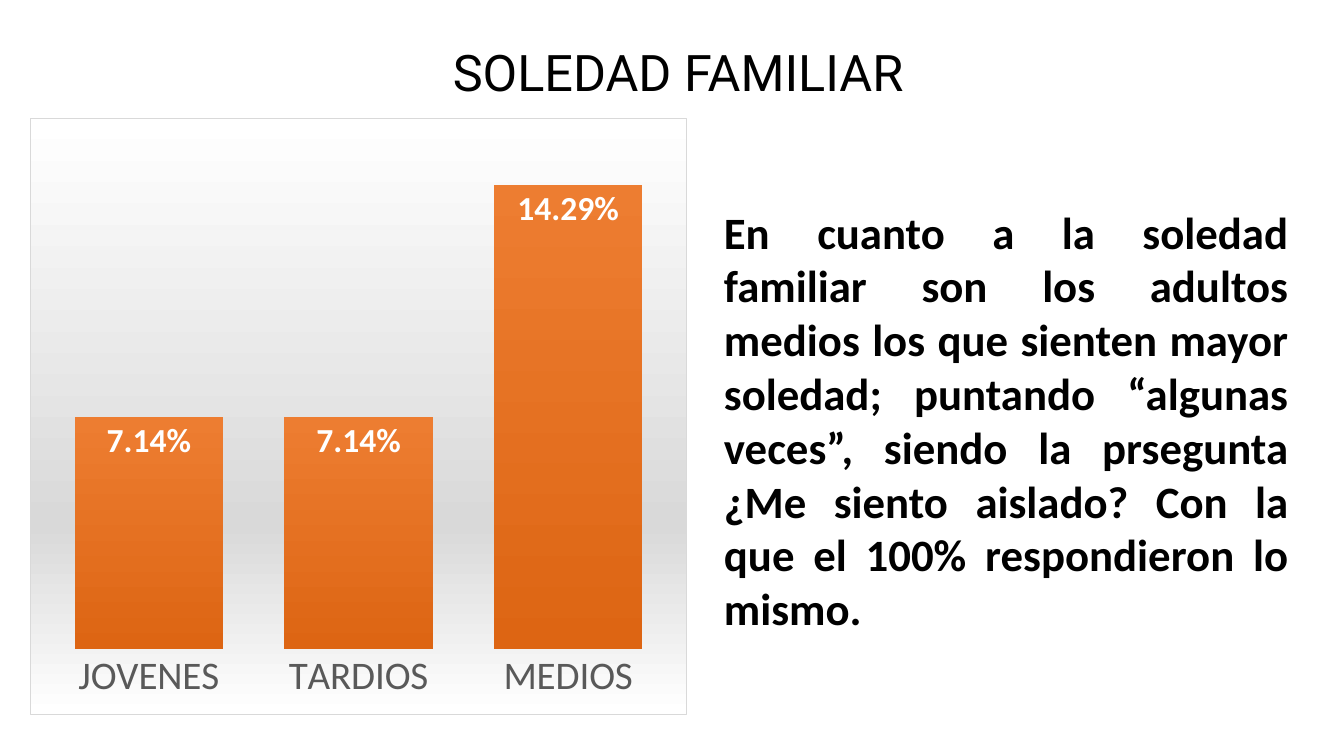
from dataclasses import dataclass

from lxml.etree import SubElement
from pptx import Presentation
from pptx.chart.data import CategoryChartData
from pptx.dml.color import RGBColor
from pptx.enum.chart import XL_CHART_TYPE, XL_LABEL_POSITION, XL_TICK_MARK
from pptx.enum.text import MSO_ANCHOR, MSO_AUTO_SIZE, PP_ALIGN
from pptx.oxml import parse_xml
from pptx.oxml.ns import nsdecls, qn
from pptx.util import Emu, Pt

PX = 9525


@dataclass(frozen=True)
class Theme:
    ink: str = "000000"
    axis_text: str = "595959"
    label_text: str = "FFFFFF"
    border: str = "D9D9D9"
    panel: tuple = ((0, "FFFFFF"), (68, "D9D9D9"), (100, "FFFFFF"))
    bar: tuple = ((0, "ED7D31"), (100, "DD6513"))
    title_font: str = "Roboto"
    body_font: str = "Calibri"
    title_size: int = 36
    body_size: int = 32
    category_size: int = 28
    label_size: int = 24
    chart_size: int = 10


THEME = Theme()


def emu(box):
    return [Emu(length * PX) for length in box]


def set_font(font, name, size, color, bold=False):
    font.name = name
    font.size = Pt(size)
    font.bold = bold
    font.color.rgb = RGBColor.from_string(color)


def vertical_gradient(stops):
    stop_xml = "".join(
        f'<a:gs pos="{percent * 1000}"><a:srgbClr val="{color}"/></a:gs>'
        for percent, color in stops
    )
    return (
        f'<a:gradFill rotWithShape="1"><a:gsLst>{stop_xml}</a:gsLst>'
        '<a:lin ang="5400000" scaled="0"/></a:gradFill>'
    )


def shape_properties(stops, border=None):
    line = "<a:noFill/>"
    if border:
        line = f'<a:solidFill><a:srgbClr val="{border}"/></a:solidFill>'
    return parse_xml(
        f'<c:spPr {nsdecls("c", "a")}>{vertical_gradient(stops)}'
        f'<a:ln w="{Pt(0.75)}">{line}</a:ln></c:spPr>'
    )


def place_plot(chart, x, y, w, h):
    plot_area = chart._chartSpace.chart.plotArea
    layout = plot_area.find(qn("c:layout"))
    if layout is None:
        layout = parse_xml(f'<c:layout {nsdecls("c")}/>')
        plot_area.insert(0, layout)
    manual = SubElement(layout, qn("c:manualLayout"))
    settings = (("layoutTarget", "inner"), ("xMode", "edge"), ("yMode", "edge"),
                ("x", x), ("y", y), ("w", w), ("h", h))
    for tag, setting in settings:
        SubElement(manual, qn(f"c:{tag}")).set("val", str(setting))


def add_words(slide, box, words, font, size, align, anchor, bold=False):
    frame = slide.shapes.add_textbox(*emu(box)).text_frame
    frame.word_wrap = True
    frame.auto_size = MSO_AUTO_SIZE.SHAPE_TO_FIT_TEXT
    frame.vertical_anchor = anchor
    paragraph = frame.paragraphs[0]
    paragraph.text = words
    paragraph.alignment = align
    set_font(paragraph.font, font, size, THEME.ink, bold)


def add_title(slide, box):
    add_words(slide, box, "SOLEDAD FAMILIAR", THEME.title_font,
              THEME.title_size, PP_ALIGN.CENTER, MSO_ANCHOR.TOP)


def add_findings(slide, box):
    add_words(
        slide, box,
        "En cuanto a la soledad familiar son los adultos medios los que "
        "sienten mayor soledad; puntando “algunas veces”, siendo la prsegunta "
        "¿Me siento aislado? Con la que el 100% respondieron lo mismo.",
        THEME.body_font, THEME.body_size, PP_ALIGN.JUSTIFY,
        MSO_ANCHOR.MIDDLE, bold=True)


def add_loneliness_chart(slide, box):
    loneliness = CategoryChartData(number_format="0.00%")
    loneliness.categories = ["JOVENES", "TARDIOS", "MEDIOS"]
    loneliness.add_series("Series 1", (0.0714, 0.0714, 0.1429))
    chart = slide.shapes.add_chart(
        XL_CHART_TYPE.COLUMN_CLUSTERED, *emu(box), loneliness).chart
    chart.has_title = False
    chart.has_legend = False
    set_font(chart.font, THEME.body_font, THEME.chart_size, THEME.ink)
    chart._chartSpace.chart.addnext(shape_properties(THEME.panel, THEME.border))
    place_plot(chart, 0.02, 0.02, 0.96, 0.87)

    ages = chart.category_axis
    ages.major_tick_mark = XL_TICK_MARK.NONE
    ages.format.line.fill.background()
    set_font(ages.tick_labels.font, THEME.body_font,
             THEME.category_size, THEME.axis_text)

    share = chart.value_axis
    share.visible = False
    share.has_major_gridlines = False
    share.minimum_scale = 0
    share.maximum_scale = 0.16
    share.tick_labels.number_format = "0.00%"
    share.tick_labels.number_format_is_linked = False

    bars = chart.plots[0]
    bars.gap_width = 41
    bars.vary_by_categories = False
    series = bars.series[0]
    series.invert_if_negative = False
    series._element.find(qn("c:tx")).addnext(shape_properties(THEME.bar))

    labels = series.data_labels
    labels.show_value = True
    labels.position = XL_LABEL_POSITION.INSIDE_END
    labels.number_format = "0.00%"
    labels.number_format_is_linked = False
    set_font(labels.font, THEME.body_font, THEME.label_size,
             THEME.label_text, bold=True)


def main():
    presentation = Presentation()
    presentation.slide_width, presentation.slide_height = emu((1280, 720))
    slide = presentation.slides.add_slide(presentation.slide_layouts[6])
    add_title(slide, (299, 34, 694, 68))
    add_loneliness_chart(slide, (29, 112, 625, 569))
    add_findings(slide, (680, 162, 557, 475))
    presentation.save("out.pptx")


if __name__ == "__main__":
    main()
